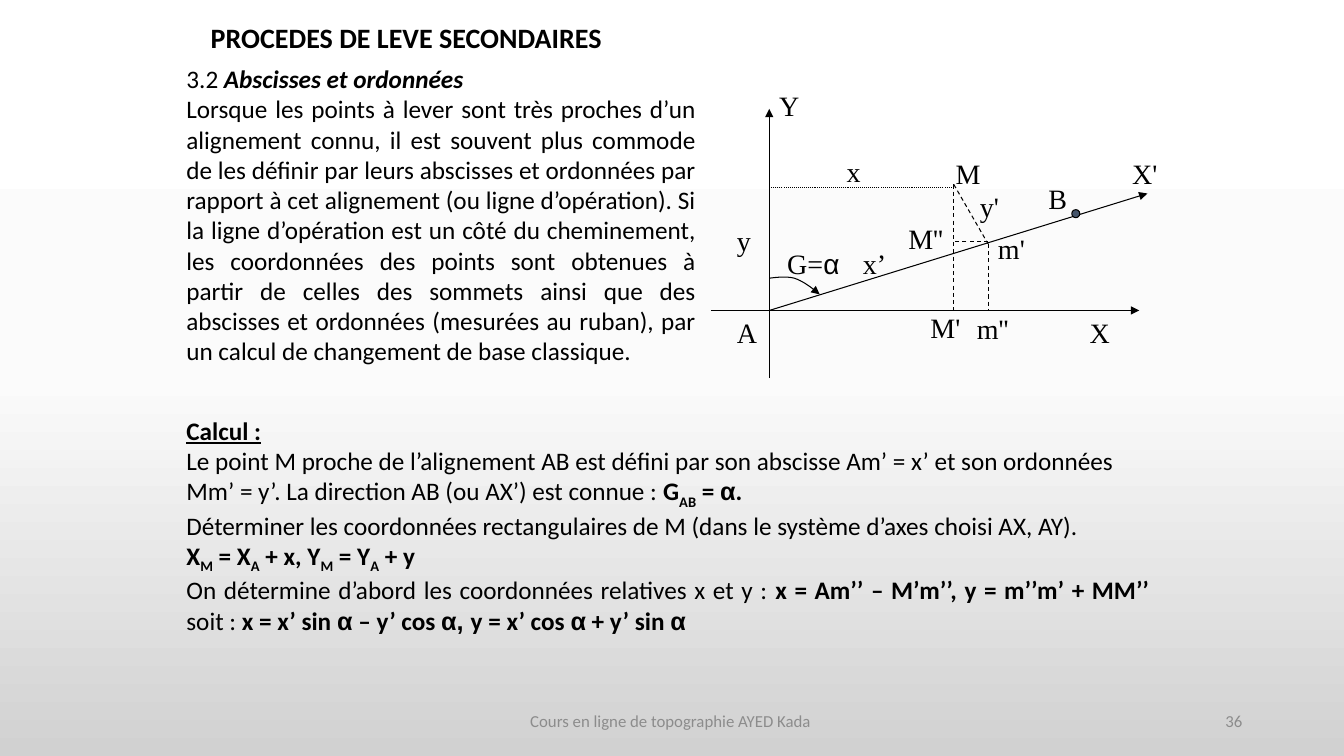
from copy import deepcopy

from lxml.etree import SubElement
from pptx import Presentation
from pptx.dml.color import RGBColor
from pptx.enum.dml import MSO_LINE
from pptx.enum.shapes import MSO_CONNECTOR, MSO_SHAPE
from pptx.enum.text import MSO_ANCHOR, MSO_AUTO_SIZE, PP_ALIGN
from pptx.oxml.ns import qn
from pptx.util import Inches, Pt

BLACK = RGBColor(0x00, 0x00, 0x00)
GREY = RGBColor(0x8C, 0x8C, 0x8C)
SLATE = RGBColor(0x44, 0x54, 0x6A)
BACKGROUND_STOPS = [
    (0, RGBColor(0xFF, 0xFF, 0xFF)),
    (0.5, RGBColor(0xFB, 0xFB, 0xFB)),
    (1, RGBColor(0xD1, 0xD1, 0xD1)),
]

# Run styles: b bold, i italic, u underlined, s subscript, a Arial
METHOD = [
    [("3.2", ""), (" Abscisses et ordonnées", "bi")],
    [("Lorsque les points à lever sont très proches d’un alignement connu, il est "
      "souvent plus commode de les définir par leurs abscisses et ordonnées par rapport "
      "à cet alignement (ou ligne d’opération). Si la ligne d’opération est un côté du "
      "cheminement, les coordonnées des points sont obtenues à partir de celles des "
      "sommets ainsi que des abscisses et ordonnées (mesurées au ruban), par un calcul "
      "de changement de base classique.", "")],
]
CALCULATION = [
    [("Calcul :", "bu")],
    [("Le point M proche de l’alignement AB est défini par son abscisse Am’ = x’ "
      "et son ordonnées ", "")],
    [("Mm’ = y’. La direction AB (ou AX’) est connue : ", ""),
     ("G", "b"), ("AB", "bs"), (" = ", "b"), ("α", "ba"), (".", "b")],
    [("Déterminer les coordonnées rectangulaires de M (dans le système d’axes choisi "
      "AX, AY).", "")],
    [("X", "b"), ("M", "bs"), (" = X", "b"), ("A", "bs"), (" + x, Y", "b"),
     ("M", "bs"), (" = Y", "b"), ("A", "bs"), (" + y", "b")],
    [("On détermine d’abord les coordonnées relatives x et y :", ""),
     (" x = Am’’ – M’m’’, y = m’’m’ + MM’’", "b"), (" soit : ", ""),
     ("x = x’ sin ", "b"), ("α", "ba"), (" – y’ cos ", "b"), ("α, ", "ba"),
     ("y = x’ cos ", "b"), ("α", "ba"), (" + y’ sin ", "b"), ("α", "ba")],
]

# Points of the survey figure
ORIGIN = (7.63, 3.08)
POINT_M = (9.46, 1.83)
FOOT_ON_LINE = (9.8, 2.42)
AXES = [
    ((7.63, 3.75), (7.63, 1.08)),
    ((7.05, 3.08), (11.3, 3.08)),
    (ORIGIN, (11.38, 1.92)),
]
DASHED_LINES = [
    (POINT_M, (9.46, 3.08)),
    (POINT_M, FOOT_ON_LINE),
    ((9.8, 2.4), (9.46, 2.4)),
    (FOOT_ON_LINE, (9.8, 3.08)),
]
ANGLE_CURVE = [(7.63, 2.76), (7.71, 2.75), (7.8, 2.74), (7.88, 2.76),
               (7.96, 2.79), (8.05, 2.85), (8.13, 2.92)]
LABELS = [
    ("X", 10.71, 3.08, 0.5), ("Y", 7.63, 0.83, 0.58), ("M", 9.38, 1.5, 0.5),
    ("x", 8.3, 1.48, 0.67), ("y", 7.21, 2.17, 0.33), ("A", 7.21, 3.08, 0.42),
    ("x’", 8.46, 2.4, 0.43), ("X'", 11.13, 1.5, 0.45), ("y'", 9.62, 1.83, 0.39),
    ("M''", 8.91, 2.15, 0.55), ("M'", 9.13, 3.03, 0.5), ("m''", 9.59, 3.04, 0.52),
    ("m'", 9.8, 2.25, 0.47), ("B", 10.3, 1.75, 0.39),
]


def paint_background(slide):
    fill = slide.background.fill
    fill.gradient()
    fill.gradient_angle = 270
    stop_list = next(slide._element.iter(qn("a:gsLst")))
    stop_list.insert(1, deepcopy(stop_list[0]))
    for stop, (position, color) in zip(fill.gradient_stops, BACKGROUND_STOPS):
        stop.position = position
        stop.color.rgb = color


def format_run(run, size, font="Calibri", color=BLACK, style=""):
    run.font.size = Pt(size)
    run.font.name = "Arial" if "a" in style else font
    run.font.color.rgb = color
    run.font.bold = "b" in style
    run.font.italic = "i" in style
    run.font.underline = "u" in style
    if "s" in style:
        run.font._element.set("baseline", "-25000")


def add_text(shapes, box, paragraphs, size, align=PP_ALIGN.LEFT, wrap=True,
             anchor=MSO_ANCHOR.TOP, **run_format):
    """Add a text box whose paragraphs are lists of (text, style) runs."""
    frame = shapes.add_textbox(*map(Inches, box)).text_frame
    frame.word_wrap = wrap
    frame.vertical_anchor = anchor
    for index, runs in enumerate(paragraphs):
        paragraph = frame.add_paragraph() if index else frame.paragraphs[0]
        paragraph.alignment = align
        for text, style in runs:
            run = paragraph.add_run()
            run.text = text
            format_run(run, size, style=style, **run_format)
    return frame


def add_title(slide, text):
    title = slide.shapes.title
    title.left, title.top, title.width, title.height = map(
        Inches, (1.99, 0.15, 9.42, 0.43))
    frame = title.text_frame
    frame.text = text
    frame.word_wrap = True
    frame.auto_size = MSO_AUTO_SIZE.NONE
    frame.vertical_anchor = MSO_ANCHOR.TOP
    frame.paragraphs[0].alignment = PP_ALIGN.JUSTIFY
    format_run(frame.paragraphs[0].runs[0], 20, style="b")


def style_line(line, dash=None, arrow=False):
    line.color.rgb = BLACK
    line.width = Pt(0.75)
    if dash:
        line.dash_style = dash
    if arrow:
        SubElement(line._get_or_add_ln(), qn("a:tailEnd"), type="triangle")


def add_line(shapes, start, end, dash=None, arrow=False):
    connector = shapes.add_connector(
        MSO_CONNECTOR.STRAIGHT, *map(Inches, (*start, *end)))
    style_line(connector.line, dash, arrow)
    SubElement(connector._element.spPr, qn("a:effectLst"))


def add_curve_arrow(shapes, points):
    """Draw cubic segments: a start point, then three points for each segment."""
    start, *others = [tuple(map(Inches, point)) for point in points]
    builder = shapes.build_freeform(*start)
    builder.add_line_segments(others, close=False)
    curve = builder.convert_to_shape()
    curve.shadow.inherit = False
    curve.fill.background()
    style_line(curve.line, arrow=True)
    outline = next(curve._element.iter(qn("a:path")))
    straight_parts = outline.findall(qn("a:lnTo"))
    for first in range(0, len(straight_parts), 3):
        bezier = SubElement(outline, qn("a:cubicBezTo"))
        for part in straight_parts[first:first + 3]:
            bezier.append(part[0])
            outline.remove(part)


def add_figure(slide):
    shapes = slide.shapes.add_group_shape().shapes
    for start, end in AXES:
        add_line(shapes, start, end, arrow=True)
    add_line(shapes, (9.46, 1.86), (7.63, 1.86), MSO_LINE.ROUND_DOT)
    for start, end in DASHED_LINES:
        add_line(shapes, start, end, MSO_LINE.DASH)
    add_curve_arrow(shapes, ANGLE_CURVE)
    for text, left, top, width in LABELS:
        add_text(shapes, (left, top, width, 0.43), [[(text, "")]], 20,
                 wrap=len(text) == 1, font="Times New Roman")
    add_text(shapes, (7.71, 2.4, 0.83, 0.43), [[("G=", ""), ("α", "a")]], 20,
             font="Times New Roman")
    point_b = shapes.add_shape(
        MSO_SHAPE.OVAL, *map(Inches, (10.63, 2.08, 0.08, 0.08)))
    point_b.shadow.inherit = False
    point_b.fill.solid()
    point_b.fill.fore_color.rgb = SLATE
    style_line(point_b.line)


def main():
    presentation = Presentation()
    presentation.slide_width = Inches(13.33)
    presentation.slide_height = Inches(7.5)
    slide = presentation.slides.add_slide(presentation.slide_layouts[5])
    paint_background(slide)
    add_title(slide, "PROCEDES DE LEVE SECONDAIRES")
    method = add_text(slide.shapes, (1.75, 0.58, 5.25, 3.43), METHOD, 18,
                      PP_ALIGN.JUSTIFY)
    method.paragraphs[0].alignment = PP_ALIGN.LEFT
    add_text(slide.shapes, (1.75, 4.07, 9.75, 2.22), CALCULATION, 18,
             PP_ALIGN.JUSTIFY)
    add_figure(slide)
    for text, left, width, align in [
        ("36", 9.42, 3, PP_ALIGN.RIGHT),
        ("Cours en ligne de topographie AYED Kada ", 4.42, 4.5, PP_ALIGN.CENTER),
    ]:
        add_text(slide.shapes, (left, 6.95, width, 0.4), [[(text, "")]], 12, align,
                 anchor=MSO_ANCHOR.MIDDLE, color=GREY)
    presentation.save("out.pptx")


if __name__ == "__main__":
    main()
